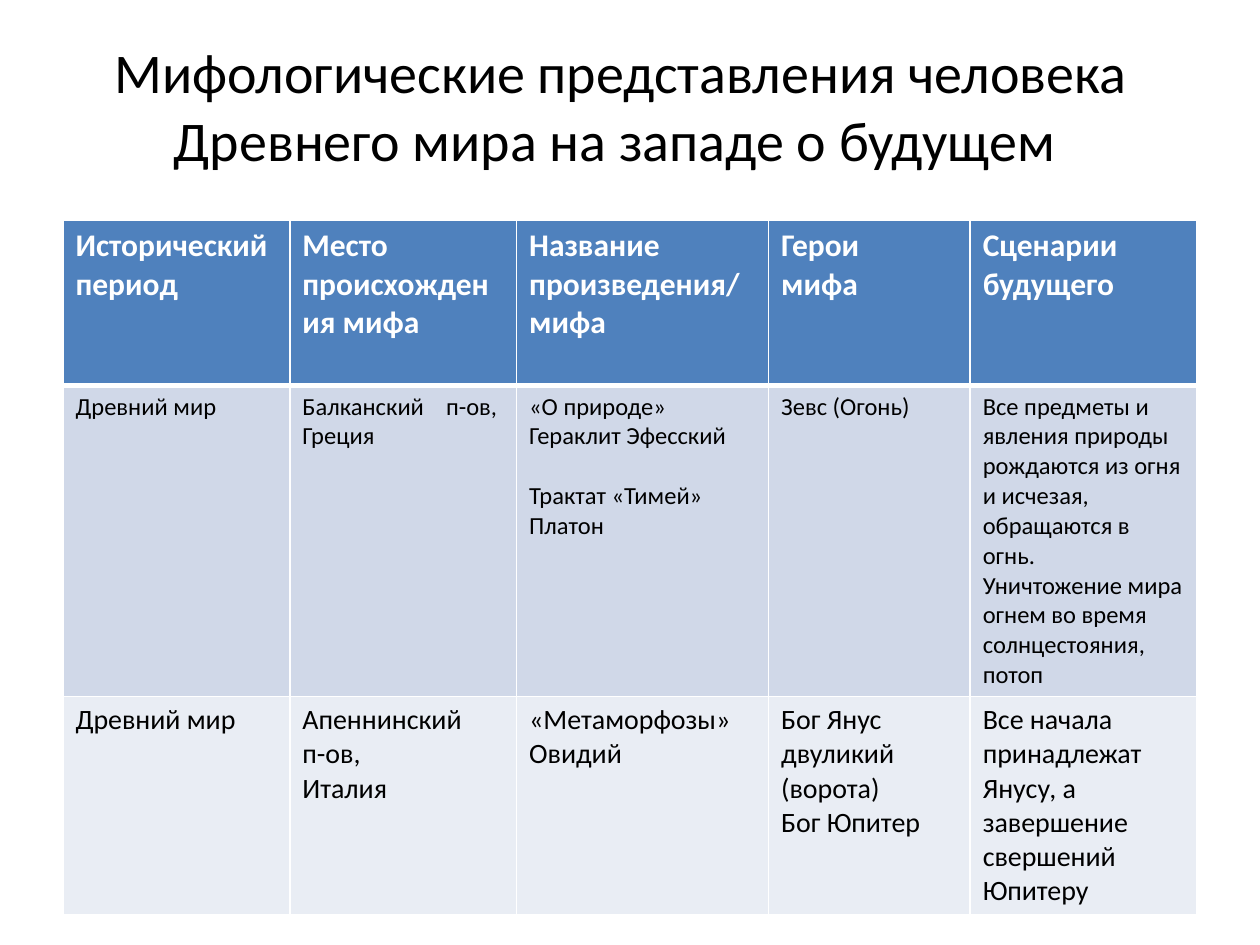
from dataclasses import dataclass

from lxml import etree
from pptx import Presentation
from pptx import util as u
from pptx.dml.color import RGBColor
from pptx.enum import text
from pptx.oxml.ns import qn


@dataclass(frozen=True)
class Theme:
    font: str = "Calibri"
    ink: str = "000000"
    white: str = "FFFFFF"
    header: str = "4F81BD"
    band_dark: str = "D0D8E8"
    band_light: str = "E9EDF4"
    title_size: int = 32
    line: float = 1
    header_line: float = 3


@dataclass(frozen=True)
class Row:
    height: float
    size: int
    fill: str
    color: str
    cells: list[list[str]]
    bold: bool = False
    top: float = Theme.line
    bottom: float = Theme.line


T = Theme()
COLUMNS = [1.8, 1.8, 2, 1.6, 1.8]
GAP_BEFORE = {"Трактат «Тимей» Платон": 17}
TAB_STOP = 1.14
ROWS = [
    Row(1.31, 18, T.header, T.white, [
        ["Исторический период"],
        ["Место происхождения мифа"],
        ["Название", "произведения/мифа"],
        ["Герои", "мифа"],
        ["Сценарии", "будущего"],
    ], bold=True, bottom=T.header_line),
    Row(2.47, 14, T.band_dark, T.ink, [
        ["Древний мир"],
        ["Балканский\tп-ов,", "Греция"],
        ["«О природе»", "Гераклит Эфесский", "Трактат «Тимей» Платон"],
        ["Зевс (Огонь)"],
        ["Все предметы и явления природы рождаются из огня и исчезая, обращаются в огнь.",
         "Уничтожение мира огнем во время солнцестояния, потоп"],
    ], top=T.header_line),
    Row(1.73, 16, T.band_light, T.ink, [
        ["Древний мир"],
        ["Апеннинский", "п-ов,", "Италия"],
        ["«Метаморфозы»", "Овидий"],
        ["Бог Янус двуликий (ворота)", "Бог Юпитер"],
        ["Все начала принадлежат Янусу, а завершение свершений Юпитеру"],
    ]),
]


def write(tf, lines: list[str], *, size: int, color: str, bold: bool = False,
          align=text.PP_ALIGN.LEFT) -> None:
    """Fill a text frame with one paragraph per line."""
    for i, line in enumerate(lines):
        p = tf.paragraphs[0] if i == 0 else tf.add_paragraph()
        p.alignment = align
        if line in GAP_BEFORE:
            p.space_before = u.Pt(GAP_BEFORE[line])
        r = p.add_run()
        r.text = line
        r.font.name, r.font.size, r.font.bold = T.font, u.Pt(size), bold
        r.font.color.rgb = RGBColor.from_string(color)
        if "\t" in line:
            tabs = etree.SubElement(p._p.get_or_add_pPr(), qn("a:tabLst"))
            etree.SubElement(tabs, qn("a:tab"), pos=str(u.Inches(TAB_STOP)), algn="l")


def set_borders(cell, top: float, bottom: float) -> None:
    """Draw white borders ahead of the cell's fill."""
    tc_pr = cell._tc.get_or_add_tcPr()
    widths = {"lnL": T.line, "lnR": T.line, "lnT": top, "lnB": bottom}
    for i, (tag, width) in enumerate(widths.items()):
        ln = etree.Element(qn(f"a:{tag}"), w=str(u.Pt(width)))
        fill = etree.SubElement(ln, qn("a:solidFill"))
        etree.SubElement(fill, qn("a:srgbClr"), val=T.white)
        tc_pr.insert(i, ln)


def add_title(s, title: str) -> None:
    """Place and format the title placeholder."""
    sp = s.shapes.title
    sp.left, sp.top = u.Inches(0.43), u.Inches(0.21)
    sp.width, sp.height = u.Inches(9), u.Inches(1.25)
    sp.text_frame.vertical_anchor = text.MSO_ANCHOR.MIDDLE
    write(sp.text_frame, [title], size=T.title_size, color=T.ink,
          align=text.PP_ALIGN.CENTER)


def add_myth_table(s, rows: list[Row]) -> None:
    """Build the table of myths row by row."""
    table = s.shapes.add_table(
        len(rows), len(COLUMNS), u.Inches(0.5), u.Inches(1.75),
        u.Inches(sum(COLUMNS)), u.Inches(sum(row.height for row in rows))).table
    for column, width in zip(table.columns, COLUMNS):
        column.width = u.Inches(width)
    for i, row in enumerate(rows):
        table.rows[i].height = u.Inches(row.height)
        for j, lines in enumerate(row.cells):
            cell = table.cell(i, j)
            cell.fill.solid()
            cell.fill.fore_color.rgb = RGBColor.from_string(row.fill)
            set_borders(cell, row.top, row.bottom)
            write(cell.text_frame, lines, size=row.size, color=row.color, bold=row.bold)


def main() -> None:
    """Build the slide and save it."""
    prs = Presentation()
    prs.slide_width, prs.slide_height = u.Inches(10), u.Inches(7.5)
    s = prs.slides.add_slide(prs.slide_layouts[5])
    add_title(s, "Мифологические представления человека Древнего мира на западе о будущем ")
    add_myth_table(s, ROWS)
    prs.save("out.pptx")


if __name__ == "__main__":
    main()
